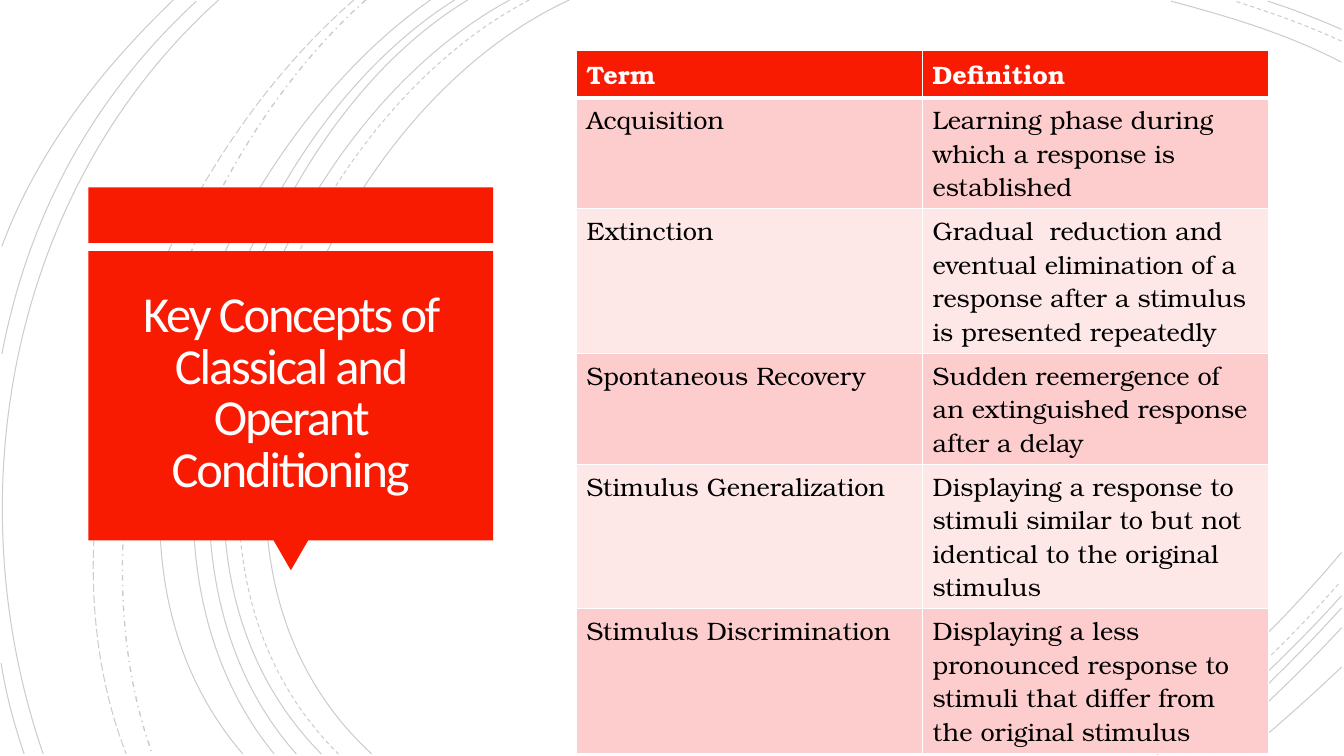
from dataclasses import dataclass

from lxml.etree import SubElement
from pptx import Presentation
from pptx.dml.color import RGBColor as RGB
from pptx.enum.dml import MSO_LINE as DASH
from pptx.enum.shapes import MSO_SHAPE as SHAPE
from pptx.enum.text import MSO_ANCHOR, MSO_AUTO_SIZE, PP_ALIGN
from pptx.oxml.ns import qn
from pptx.util import Cm, Pt


@dataclass(frozen=True)
class Theme:
    """Colours, fonts and type sizes of the slide."""
    red: RGB = RGB(0xF8, 0x1B, 0x02)
    rose: RGB = RGB(0xFC, 0xCD, 0xCC)
    blush: RGB = RGB(0xFE, 0xE8, 0xE7)
    black: RGB = RGB(0, 0, 0)
    white: RGB = RGB(0xFF, 0xFF, 0xFF)
    title_white: RGB = RGB(0xFF, 0xFE, 0xFF)
    title_font: str = "Calibri"
    table_font: str = "TeX Gyre Bonum"
    title_size: Pt = Pt(36)
    table_size: Pt = Pt(18)


THEME = Theme()
SLIDE_BOX = (0, 0, 33.87, 19.05)
TITLE_BOX = (2.23, 4.72, 10.2, 9.65)
TABLE_BOX = (14.53, 1.28, 17.44, 6.24)

ARCS = {
    (DASH.SOLID, 0.75): [
        ((14.35, 0), (8, 2.92), (3.63, 13.72), (9.37, 19)),
        ((33.81, 1.57), (32.46, 0.86), (30.94, 0.41), (29.51, 0.03)),
        ((28.47, 19), (30.4, 17.53), (32.23, 15.8), (33.81, 13.92)),
        ((12.85, 0), (6.86, 3.23), (2.79, 13.64), (8.1, 19)),
        ((33.81, 0.74), (33.2, 0.48), (32.59, 0.23), (31.95, 0.03)),
        ((29.57, 19), (31.06, 17.81), (32.51, 16.46), (33.81, 15.01)),
        ((11.79, 0), (6.2, 3.38), (2.79, 13.74), (7.47, 19)),
        ((30, 19), (31.34, 17.88), (32.61, 16.64), (33.81, 15.32)),
        ((11.46, 0), (5.87, 3.51), (2.46, 13.54), (6.91, 19)),
        ((30.51, 19), (31.65, 18.01), (32.77, 16.94), (33.81, 15.82)),
        ((10.85, 0), (5.51, 3.73), (1.35, 13.44), (6.12, 19)),
        ((31.34, 19), (32.18, 18.31), (33, 17.58), (33.81, 16.81)),
        ((5.51, 0), (0.28, 4.7), (-1.17, 12.45), (1.09, 19)),
        ((4.95, 0.03), (2.34, 2.44), (0.71, 5.44), (0.05, 8.92)),
        ((0.03, 16.71), (0.15, 17.5), (0.36, 18.26), (0.61, 19)),
        ((4.37, 0), (2.54, 1.75), (0.94, 3.81), (0.05, 6.2)),
    ],
    (DASH.DASH, 0.75): [
        ((13.34, 0), (7.24, 3.18), (3.12, 13.64), (8.53, 19)),
        ((33.81, 1.04), (32.94, 0.64), (32, 0.3), (31.12, 0.03)),
        ((29.16, 19.02), (30.81, 17.73), (32.39, 16.26), (33.78, 14.66)),
    ],
    (DASH.DASH_DOT, 1): [((9.22, 0), (4.47, 4.22), (1.65, 12.93), (3.84, 19))],
    (DASH.LONG_DASH, 0.75): [((8.92, 0), (3.99, 4.29), (0.74, 12.67), (3.18, 19))],
}

CONCEPTS = [
    ("Term", "Definition"),
    ("Acquisition", "Learning phase during which a response is established"),
    ("Extinction", "Gradual  reduction and eventual elimination of a response "
                   "after a stimulus is presented repeatedly"),
    ("Spontaneous Recovery", "Sudden reemergence of an extinguished response after a delay"),
    ("Stimulus Generalization", "Displaying a response to stimuli similar to but not "
                                "identical to the original stimulus"),
    ("Stimulus Discrimination", "Displaying a less pronounced response to stimuli that "
                                "differ from the original stimulus"),
]


def add_arc(slide, controls):
    """Add one open cubic curve from its four control points."""
    start, *rest = controls
    outline = slide.shapes.build_freeform(*start)
    outline.add_line_segments(rest, close=False)
    arc = outline.convert_to_shape()
    route = arc._element.find(".//" + qn("a:path"))
    curve = SubElement(route, qn("a:cubicBezTo"))
    for segment in route.findall(qn("a:lnTo")):
        curve.append(segment.find(qn("a:pt")))
        route.remove(segment)
    return arc


def add_backdrop(slide, box):
    """Draw the faint arcs behind the content."""
    left, top = box[:2]
    for (dash, weight), arcs in ARCS.items():
        for controls in arcs:
            arc = add_arc(slide, [(Cm(left + x), Cm(top + y)) for x, y in controls])
            arc.shadow.inherit = False
            arc.fill.background()
            arc.line.color.rgb = THEME.black
            arc.line.width = Pt(weight)
            arc.line.dash_style = dash
            tint = arc.line._ln.find(".//" + qn("a:srgbClr"))
            SubElement(tint, qn("a:alpha"), val="20000")


def add_title_panel(slide, box):
    """Place the red strip, the pointed panel and the title on it."""
    left, top, width, height = box
    panel_top, panel_height = top + 1.61, 7.29
    pointer_width, pointer_height = 0.89, 0.77
    parts = [
        (SHAPE.RECTANGLE, left, top, width, 1.4, 0),
        (SHAPE.ISOSCELES_TRIANGLE, left + (width - pointer_width) / 2,
         top + height - pointer_height, pointer_width, pointer_height, 180),
        (SHAPE.RECTANGLE, left, panel_top, width, panel_height, 0),
    ]
    for kind, *place, turn in parts:
        part = slide.shapes.add_shape(kind, *map(Cm, place))
        part.rotation = turn
        part.shadow.inherit = False
        part.fill.solid()
        part.fill.fore_color.rgb = THEME.red
        part.line.fill.background()

    title = slide.shapes.title
    slide.shapes._spTree.append(title._element)
    title.left, title.top = Cm(left + 0.23), Cm(panel_top + 0.2)
    title.width, title.height = Cm(width - 0.47), Cm(6.83)
    frame = title.text_frame
    frame.text = "Key Concepts of Classical and Operant Conditioning"
    frame.word_wrap = True
    frame.auto_size = MSO_AUTO_SIZE.NONE
    frame.vertical_anchor = MSO_ANCHOR.MIDDLE
    frame.margin_left = frame.margin_right = Cm(0.64)
    frame.margin_top = frame.margin_bottom = Cm(0.64)
    heading = frame.paragraphs[0]
    heading.alignment = PP_ALIGN.CENTER
    heading.line_spacing = 0.85
    style_text(heading, THEME.title_font, THEME.title_size, THEME.title_white)
    heading.font._rPr.set("spc", "-150")


def style_text(paragraph, font_name, size, color, bold=False):
    """Format the font of a whole paragraph."""
    font = paragraph.font
    font.name, font.size, font.bold = font_name, size, bold
    font.color.rgb = color


def add_borders(cell, top_weight, bottom_weight):
    """Give a cell white borders."""
    properties = cell._tc.get_or_add_tcPr()
    for side, weight in (("L", 1), ("R", 1), ("T", top_weight), ("B", bottom_weight)):
        border = SubElement(properties, qn(f"a:ln{side}"), w=str(Pt(weight)))
        paint = SubElement(border, qn("a:solidFill"))
        SubElement(paint, qn("a:srgbClr"), val=str(THEME.white))


def add_concept_table(slide, box):
    """Place the table of terms and definitions."""
    table = slide.shapes.add_table(len(CONCEPTS), 2, *map(Cm, box)).table
    for row, entries in enumerate(CONCEPTS):
        header = row == 0
        band = THEME.red if header else THEME.rose if row % 2 else THEME.blush
        for column, entry in enumerate(entries):
            cell = table.cell(row, column)
            cell.text = entry
            style_text(cell.text_frame.paragraphs[0], THEME.table_font, THEME.table_size,
                       THEME.white if header else THEME.black, header)
            add_borders(cell, 3 if row == 1 else 1, 3 if header else 1)
            cell.fill.solid()
            cell.fill.fore_color.rgb = band


def main():
    """Build and save the slide."""
    deck = Presentation()
    deck.slide_width, deck.slide_height = map(Cm, SLIDE_BOX[2:])
    slide = deck.slides.add_slide(deck.slide_layouts[5])
    add_backdrop(slide, SLIDE_BOX)
    add_title_panel(slide, TITLE_BOX)
    add_concept_table(slide, TABLE_BOX)
    deck.save("out.pptx")


if __name__ == "__main__":
    main()
